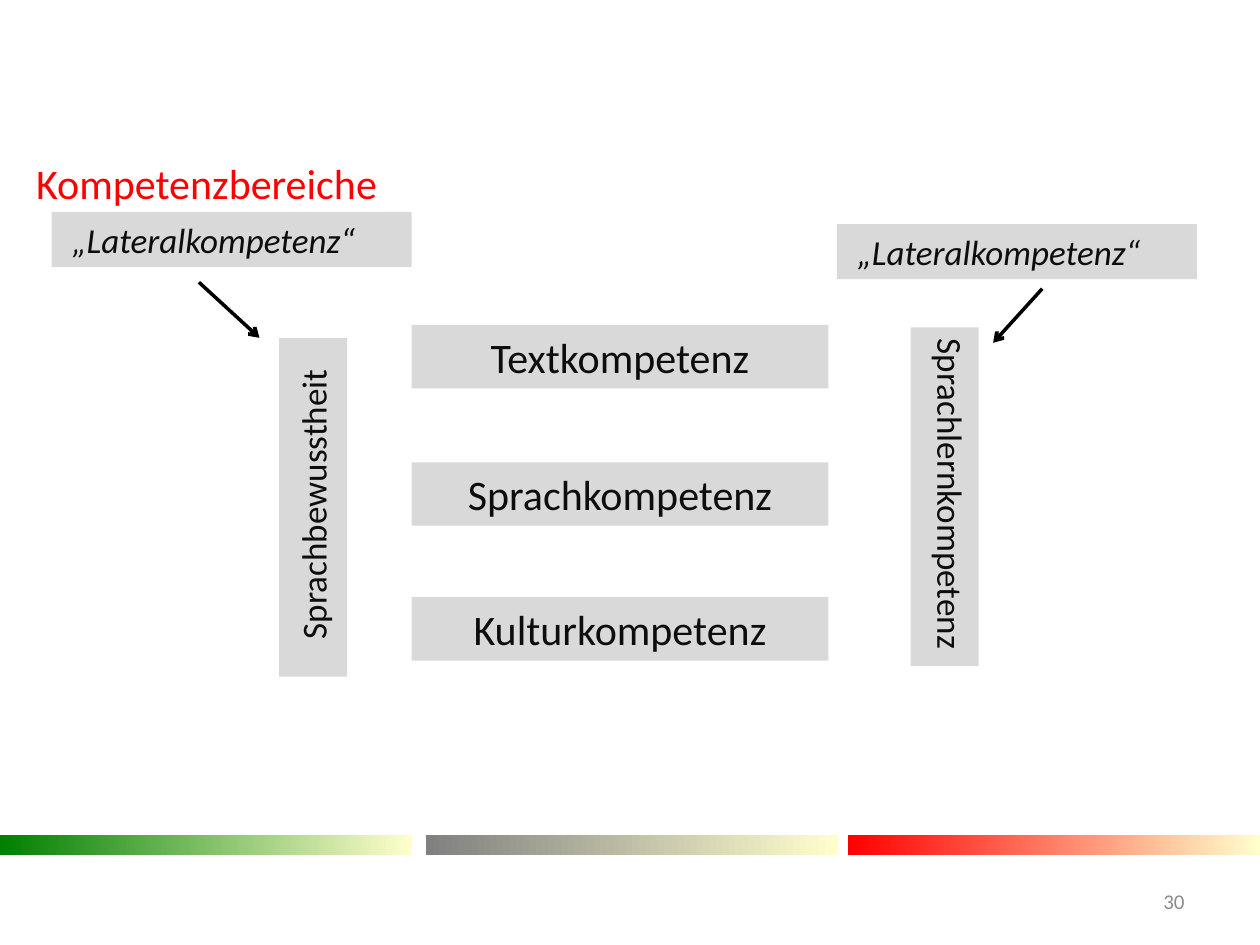
from pptx import Presentation
from pptx.dml.color import RGBColor
from pptx.enum.shapes import MSO_CONNECTOR as Connector, MSO_SHAPE as Shape
from pptx.enum.text import MSO_ANCHOR as Anchor, PP_ALIGN as Align
from pptx.oxml.ns import qn
from pptx.util import Cm, Pt
from lxml.etree import SubElement

FONT = "Calibri"
WHITE = RGBColor(0xFF, 0xFF, 0xFF)
BLACK = RGBColor(0, 0, 0)
INK = RGBColor(0x0D, 0x0D, 0x0D)
PANEL = RGBColor(0xD9, 0xD9, 0xD9)
MUTED = RGBColor(0x8C, 0x8C, 0x8C)
GREEN = RGBColor(0, 0x80, 0)
GRAY = RGBColor(0x80, 0x80, 0x80)
RED = RGBColor(0xFF, 0, 0)
CREAM = RGBColor(0xFF, 0xFF, 0xCC)


def add_rect(page, left, top, width, height):
    box = page.shapes.add_shape(Shape.RECTANGLE, Cm(left), Cm(top), Cm(width), Cm(height))
    box.shadow.inherit = False
    box.line.fill.background()
    return box


def write(box, text, size=24, color=INK, align=Align.LEFT, anchor=Anchor.TOP,
          italic=False, indent=0.25, inset=0.13, direction=None):
    frame = box.text_frame
    frame.word_wrap = True
    frame.vertical_anchor = anchor
    frame.margin_left, frame.margin_top = Cm(indent), Cm(inset)
    if direction:
        frame._txBody.bodyPr.set("vert", direction)
    para = frame.paragraphs[0]
    para.alignment = align
    span = para.add_run()
    span.text = text
    span.font.name = FONT
    span.font.size = Pt(size)
    span.font.italic = italic
    span.font.color.rgb = color


def add_panel(page, text, left, top, width, height, fill=PANEL, **style):
    box = add_rect(page, left, top, width, height)
    box.fill.solid()
    box.fill.fore_color.rgb = fill
    write(box, text, **style)


def add_gradient_bar(page, left, color):
    bar = add_rect(page, left, 16.84, 8.31, 0.4)
    bar.fill.gradient()
    bar.fill.gradient_angle = 0
    for stop, shade in zip(bar.fill.gradient_stops, (color, CREAM)):
        stop.color.rgb = shade


def add_arrow(page, x1, y1, x2, y2):
    arrow = page.shapes.add_connector(Connector.STRAIGHT, Cm(x1), Cm(y1), Cm(x2), Cm(y2))
    arrow.line.color.rgb = BLACK
    arrow.line.width = Pt(2)
    SubElement(arrow.line._get_or_add_ln(), qn("a:tailEnd"), type="arrow")
    SubElement(arrow._element.spPr, qn("a:effectLst"))


def main():
    deck = Presentation()
    deck.slide_width, deck.slide_height = Cm(25.4), Cm(19.05)
    page = deck.slides.add_slide(deck.slide_layouts[6])

    # Footer bars
    for left, color in ((0, GREEN), (8.59, GRAY), (17.09, RED)):
        add_gradient_bar(page, left, color)

    # Heading
    add_panel(page, "Kompetenzbereiche", 0.33, 2.97, 23.8, 13.44, fill=WHITE,
              color=RED, indent=0.4, inset=0.2)

    # Central competences
    for text, top in (("Textkompetenz", 6.55), ("Sprachkompetenz", 9.32),
                      ("Kulturkompetenz", 12.04)):
        add_panel(page, text, 8.3, top, 8.4, 1.28, align=Align.CENTER)

    # Vertical competences on either side
    for text, left, top, direction in (("Sprachbewusstheit", 5.63, 6.81, "vert270"),
                                       ("Sprachlernkompetenz", 18.36, 6.6, "vert")):
        add_panel(page, text, left, top, 1.37, 6.83, size=20,
                  align=Align.CENTER, direction=direction)

    # Lateral competence labels with their arrows
    for left, top in ((1.04, 4.27), (16.87, 4.52)):
        add_panel(page, "„Lateralkompetenz“", left, top, 7.26, 1.11,
                  size=20, italic=True, indent=0.41)
    add_arrow(page, 4.01, 5.69, 5.23, 6.81)
    add_arrow(page, 21.01, 5.82, 20.02, 6.91)

    # Page number
    number = page.shapes.add_textbox(Cm(22.5), Cm(17.65), Cm(1.63), Cm(1.02))
    write(number, "30", size=12, color=MUTED, align=Align.RIGHT, anchor=Anchor.MIDDLE)

    deck.save("out.pptx")


if __name__ == "__main__":
    main()
